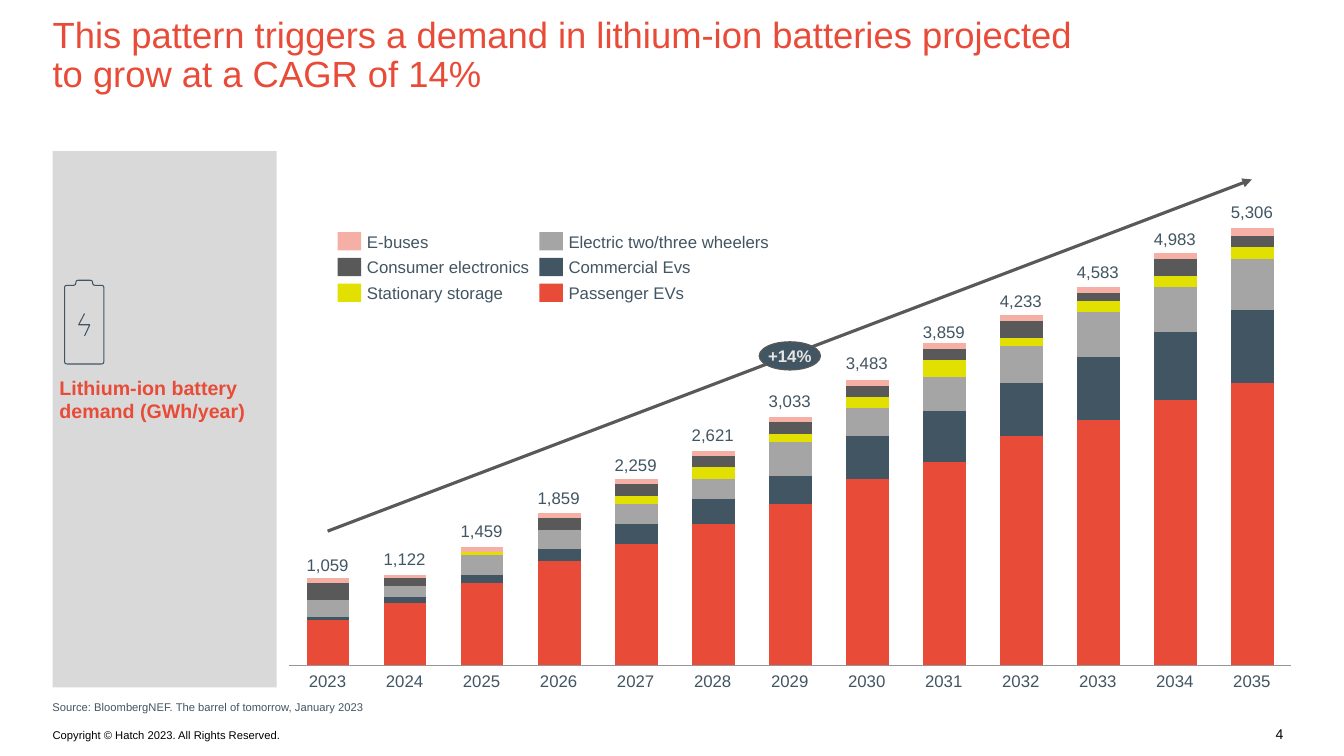
from dataclasses import dataclass

from lxml import etree
from pptx import Presentation
from pptx.chart.data import CategoryChartData
from pptx.dml.color import RGBColor
from pptx.enum.chart import XL_CHART_TYPE, XL_TICK_LABEL_POSITION, XL_TICK_MARK
from pptx.enum.shapes import MSO_CONNECTOR, MSO_SHAPE
from pptx.enum.text import MSO_ANCHOR, MSO_AUTO_SIZE, PP_ALIGN
from pptx.oxml import parse_xml
from pptx.oxml.ns import nsdecls, qn
from pptx.util import Pt

STACKED = XL_CHART_TYPE.COLUMN_STACKED
NO_LABELS, NO_TICKS = XL_TICK_LABEL_POSITION.NONE, XL_TICK_MARK.NONE
STRAIGHT = MSO_CONNECTOR.STRAIGHT
RECT, OVAL = MSO_SHAPE.RECTANGLE, MSO_SHAPE.OVAL
TOP, MIDDLE, BOTTOM = MSO_ANCHOR.TOP, MSO_ANCHOR.MIDDLE, MSO_ANCHOR.BOTTOM
LEFT, CENTER, RIGHT = PP_ALIGN.LEFT, PP_ALIGN.CENTER, PP_ALIGN.RIGHT
NO_FIT = MSO_AUTO_SIZE.NONE
Point = tuple[float, float]


@dataclass(frozen=True)
class Theme:
    font: str = "Arial"
    red: RGBColor = RGBColor(0xE8, 0x4B, 0x37)
    slate: RGBColor = RGBColor(0x42, 0x55, 0x63)
    gray: RGBColor = RGBColor(0xA5, 0xA5, 0xA5)
    yellow: RGBColor = RGBColor(0xE1, 0xE0, 0x00)
    dark: RGBColor = RGBColor(0x59, 0x59, 0x59)
    pink: RGBColor = RGBColor(0xF5, 0xAF, 0xA5)
    panel: RGBColor = RGBColor(0xD9, 0xD9, 0xD9)
    axis: RGBColor = RGBColor(0x96, 0x96, 0x96)
    pale: RGBColor = RGBColor(0xE7, 0xE6, 0xE6)
    black: RGBColor = RGBColor(0, 0, 0)
    title: float = 26
    head: float = 14
    body: float = 12
    page: float = 10
    note: float = 8


@dataclass(frozen=True)
class Box:
    x: float
    y: float
    w: float
    h: float

    def lengths(self) -> tuple:
        return Pt(self.x), Pt(self.y), Pt(self.w), Pt(self.h)


@dataclass(frozen=True)
class Sector:
    name: str
    color: RGBColor
    values: tuple[int, ...]


@dataclass(frozen=True)
class Label:
    text: str
    box: Box
    size: float
    color: RGBColor
    bold: bool = False
    align: PP_ALIGN = LEFT
    anchor: MSO_ANCHOR = MIDDLE
    wrap: bool = False
    inset: float = 0
    spacing: float = 1.0


T = Theme()
SECTORS = (
    Sector("Passenger EVs", T.red, (16, 22, 29, 37, 43, 50, 57, 66, 72, 81, 87, 94, 100)),
    Sector("Commercial Evs", T.slate, (1, 2, 3, 4, 7, 9, 10, 15, 18, 19, 22, 24, 26)),
    Sector("Electric two/three wheelers", T.gray, (6, 4, 7, 7, 7, 7, 12, 10, 12, 13, 16, 16, 18)),
    Sector("Stationary storage", T.yellow, (0, 0, 1, 0, 3, 4, 3, 4, 6, 3, 4, 4, 4)),
    Sector("Consumer electronics", T.dark, (6, 3, 0, 4, 4, 4, 4, 4, 4, 6, 3, 6, 4)),
    Sector("E-buses", T.pink, (2, 1, 2, 2, 2, 2, 2, 2, 2, 2, 2, 2, 3)),
)
TOTALS = (1059, 1122, 1459, 1859, 2259, 2621, 3033, 3483, 3859, 4233, 4583, 4983, 5306)
YEARS = range(2023, 2036)
FIRST_X, PITCH = 234, 55.02
BASE_Y, SCALE = 458.8, 0.0593
LEGEND_ROWS = 3

TITLE = Label("This pattern triggers a demand in lithium-ion batteries projected \n"
              "to grow at a CAGR of 14%", Box(37.6, 0, 884, 71.3), T.title, T.red,
              anchor=BOTTOM, wrap=True, inset=2.9, spacing=0.9)
NOTES = (
    Label("4", Box(891.4, 517.7, 25.2, 13.7), T.page, T.black, align=RIGHT, wrap=True),
    Label("Copyright © Hatch 2023. All Rights Reserved.", Box(37.6, 517.7, 165, 15),
          T.note, T.black, wrap=True),
    Label("Lithium-ion battery \ndemand (GWh/year)", Box(42.5, 270.7, 139.7, 28.8),
          T.head, T.red, bold=True),
    Label("Source: BloombergNEF. The barrel of tomorrow, January 2023",
          Box(37.4, 500.2, 613.4, 9.4), T.note, T.slate, anchor=BOTTOM, wrap=True),
)
GROWTH = Label("+14%", Box(542.2, 244.1, 43.9, 20.2), T.body, T.pale, bold=True, align=CENTER)


def write(frame, label: Label) -> None:
    """Fill a text frame and format it from its label."""
    layout = {"auto_size": NO_FIT, "word_wrap": label.wrap, "vertical_anchor": label.anchor,
              "margin_left": 0, "margin_right": 0,
              "margin_top": Pt(label.inset), "margin_bottom": Pt(label.inset)}
    para = frame.paragraphs[0]
    para.text = label.text
    shape_of_para = {"alignment": label.align, "line_spacing": label.spacing}
    face = {"name": T.font, "size": Pt(label.size), "bold": label.bold}
    for target, values in ((frame, layout), (para, shape_of_para)):
        for key, value in values.items():
            setattr(target, key, value)
    for run in para.runs:
        for key, value in face.items():
            setattr(run.font, key, value)
        run.font.color.rgb = label.color


def add_text(slide, label: Label) -> None:
    write(slide.shapes.add_textbox(*label.box.lengths()).text_frame, label)


def stroke(line, color: RGBColor, width: float) -> None:
    line.color.rgb, line.width = color, Pt(width)


def add_block(slide, kind: MSO_SHAPE, box: Box, color: RGBColor):
    block = slide.shapes.add_shape(kind, *box.lengths())
    block.shadow.inherit = False
    block.fill.solid()
    block.fill.fore_color.rgb = color
    block.line.fill.background()
    return block


def add_demand(slide) -> None:
    """Draw the stacked columns."""
    data = CategoryChartData()
    data.categories = [str(year) for year in YEARS]
    for sector in SECTORS:
        data.add_series(sector.name, sector.values)
    box = Box(200.2, 154.1, 728.6, 327.6)
    chart = slide.shapes.add_chart(STACKED, *box.lengths(), data).chart
    chart.has_legend = chart.has_title = False
    chart.font.name, chart.font.size = T.font, Pt(T.page)
    chart.font.color.rgb = T.black
    plot, cats, scale = chart.plots[0], chart.category_axis, chart.value_axis
    formats = (
        (plot, {"gap_width": 80, "overlap": 100, "vary_by_categories": False}),
        (cats, {"tick_label_position": NO_LABELS, "major_tick_mark": NO_TICKS,
                "minor_tick_mark": NO_TICKS}),
        (scale, {"minimum_scale": 0, "maximum_scale": 156, "has_major_gridlines": False,
                 "visible": False}),
    )
    for target, values in formats:
        for key, value in values.items():
            setattr(target, key, value)
    stroke(cats.format.line, T.axis, 0.75)
    for series, sector in zip(plot.series, SECTORS):
        series.format.fill.solid()
        series.format.fill.fore_color.rgb = sector.color
    area = chart._chartSpace.chart.plotArea
    for old in area.findall(qn("c:layout")):
        area.remove(old)
    rules = {"layoutTarget": "inner", "xMode": "edge", "yMode": "edge",
             "x": 0.009, "y": 0.02, "w": 0.982, "h": 0.96}
    parts = "".join(f'<c:{key} val="{value}"/>' for key, value in rules.items())
    area.insert(0, parse_xml(f'<c:layout {nsdecls("c")}><c:manualLayout>{parts}'
                             '</c:manualLayout></c:layout>'))


def add_trend(slide, start: Point, end: Point) -> None:
    arrow = slide.shapes.add_connector(STRAIGHT, *map(Pt, start + end))
    stroke(arrow.line, T.dark, 2.25)
    etree.SubElement(arrow.line._get_or_add_ln(), qn("a:tailEnd"), type="triangle")
    etree.SubElement(arrow._element.spPr, qn("a:effectLst"))


def add_legend(slide) -> None:
    for i, sector in enumerate(reversed(SECTORS)):
        col, row = divmod(i, LEGEND_ROWS)
        x, y = 241.2 + 144 * col, 165.8 + 18.4 * row
        add_block(slide, RECT, Box(x, y, 16.8, 13), sector.color)
        add_text(slide, Label(sector.name, Box(x + 20.9, y - 0.5, 120, 14.4), T.body, T.slate))


def rounded(corners: list[Point], radius: float, steps: int = 4) -> list[Point]:
    """Replace each corner of a closed outline by a short curve."""
    points = []
    for i, (x, y) in enumerate(corners):
        ends = []
        for px, py in (corners[i - 1], corners[(i + 1) % len(corners)]):
            part = radius / (abs(px - x) + abs(py - y))
            ends.append((x + (px - x) * part, y + (py - y) * part))
        (ax, ay), (bx, by) = ends
        for t in (step / steps for step in range(steps + 1)):
            u = 1 - t
            points.append((u * u * ax + 2 * u * t * x + t * t * bx,
                           u * u * ay + 2 * u * t * y + t * t * by))
    return points


def add_outline(slide, points: list[Point], close: bool) -> None:
    first, *rest = [(Pt(x), Pt(y)) for x, y in points]
    pen = slide.shapes.build_freeform(*first)
    pen.add_line_segments(rest, close=close)
    shape = pen.convert_to_shape()
    shape.shadow.inherit = False
    shape.fill.background()
    stroke(shape.line, T.slate, 0.75)


def add_battery(slide) -> None:
    case = [(46.2, 203.8), (54.2, 203.8), (54.2, 200.2), (66.2, 200.2),
            (66.2, 203.8), (74.2, 203.8), (74.2, 260), (46.2, 260)]
    bolt = [(60.4, 224), (56.2, 232), (64.1, 232), (60.4, 240)]
    add_outline(slide, rounded(case, 1.8), close=True)
    add_outline(slide, bolt, close=False)


def main() -> None:
    deck = Presentation()
    deck.slide_width, deck.slide_height = Pt(960), Pt(540)
    slide = deck.slides.add_slide(deck.slide_layouts[5])
    title = slide.shapes.title
    title.left, title.top, title.width, title.height = TITLE.box.lengths()
    write(title.text_frame, TITLE)
    add_demand(slide)
    add_trend(slide, (234, 379.4), (894.2, 128.2))
    for i, (year, total) in enumerate(zip(YEARS, TOTALS)):
        x = FIRST_X + PITCH * i - 16.5
        add_text(slide, Label(str(year), Box(x, 478.8, 33, 14.4), T.body, T.slate,
                              align=CENTER, anchor=TOP))
        add_text(slide, Label(f"{total:,}", Box(x, BASE_Y - SCALE * total, 33, 14.4),
                              T.body, T.slate, align=CENTER, anchor=BOTTOM))
    badge = add_block(slide, OVAL, GROWTH.box, T.slate)
    stroke(badge.line, T.dark, 0.75)
    write(badge.text_frame, GROWTH)
    add_legend(slide)
    add_block(slide, RECT, Box(37.6, 108, 160, 383), T.panel)
    add_battery(slide)
    for note in NOTES:
        add_text(slide, note)
    deck.save("out.pptx")


if __name__ == "__main__":
    main()
